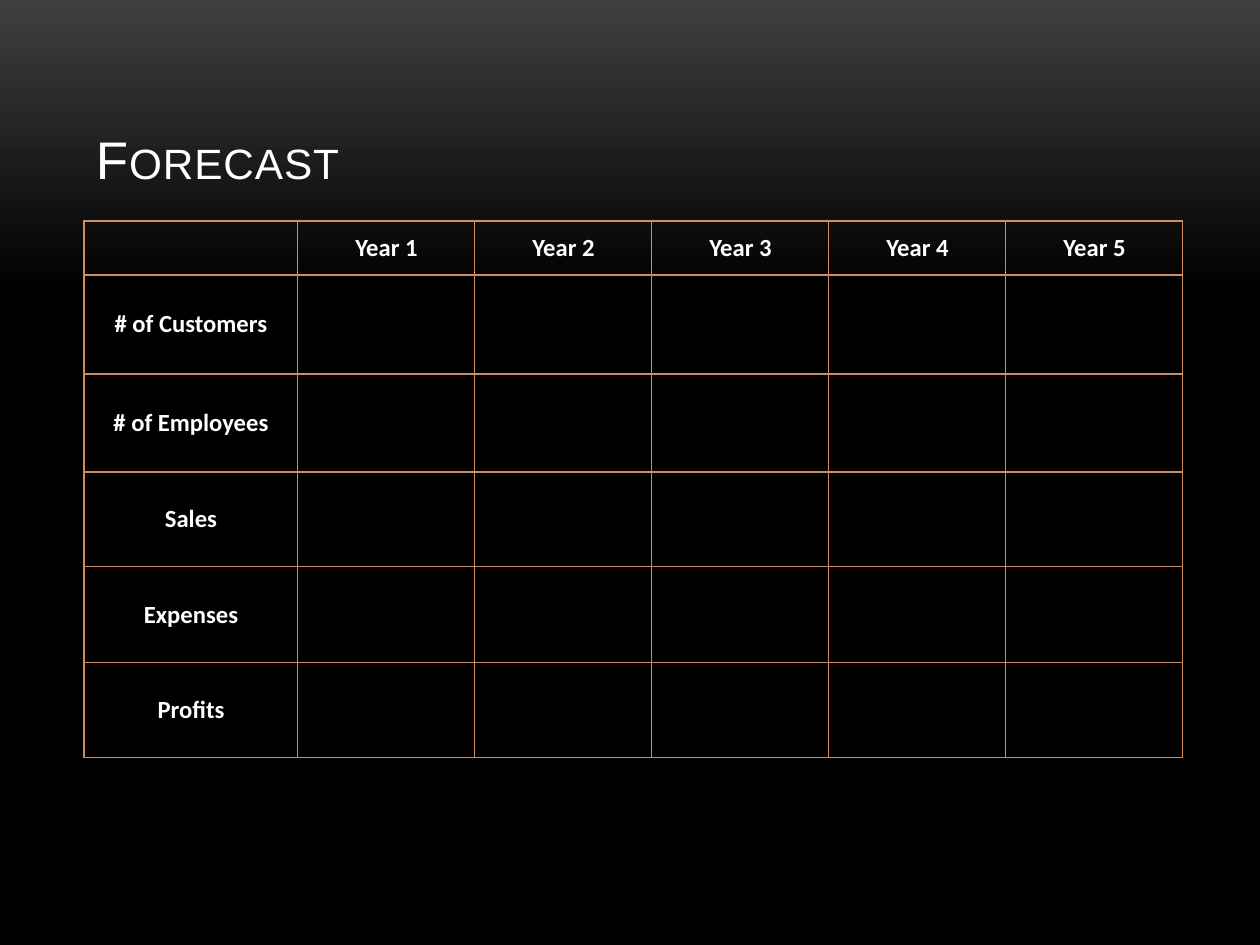
from copy import deepcopy

from pptx import Presentation
from pptx.dml.color import RGBColor
from pptx.enum.text import MSO_ANCHOR, MSO_AUTO_SIZE, PP_ALIGN
from pptx.oxml import parse_xml
from pptx.oxml.ns import nsdecls, qn
from pptx.util import Pt

PX = 10320
MIDDLE, BOTTOM = MSO_ANCHOR.MIDDLE, MSO_ANCHOR.BOTTOM
LEFT, CENTER = PP_ALIGN.LEFT, PP_ALIGN.CENTER
NO_AUTOFIT = MSO_AUTO_SIZE.NONE
WHITE, BLACK, CHARCOAL, COPPER = "FFFFFF", "000000", "3F3F3F", "CC8E60"


def color(value):
    return RGBColor.from_string(value)


def style_text(paragraph, font_name, size, align):
    paragraph.alignment = align
    for run in paragraph.runs:
        run.font.name = font_name
        run.font.size = Pt(size)
        run.font.color.rgb = color(WHITE)


prs = Presentation()
prs.slide_width, prs.slide_height = 1260 * PX, 945 * PX
slide = prs.slides.add_slide(prs.slide_layouts[5])

backdrop = slide.background.fill
backdrop.gradient()
backdrop.gradient_angle = 270
for stop, position, shade in zip(backdrop.gradient_stops, (0, 0.31), (CHARCOAL, BLACK)):
    stop.position = position
    stop.color.rgb = color(shade)
stop_list = next(slide._element.iter(qn("a:gsLst")))
last_stop = deepcopy(stop_list[-1])
last_stop.set("pos", "100000")
stop_list.append(last_stop)

heading = slide.shapes.title
heading.left, heading.top, heading.width, heading.height = (
    84 * PX, 38 * PX, 1092 * PX, 158 * PX)
heading_frame = heading.text_frame
heading_frame.text = "Forecast"
heading_frame.word_wrap = True
heading_frame.auto_size = NO_AUTOFIT
heading_frame.vertical_anchor = BOTTOM
heading_frame.margin_left = heading_frame.margin_right = 12 * PX
heading_frame.margin_top = heading_frame.margin_bottom = 6 * PX
style_text(heading_frame.paragraphs[0], "Arial", 43, LEFT)
heading_properties = heading_frame.paragraphs[0].runs[0].font._element
heading_properties.set("cap", "small")
heading_properties.set("spc", "70")

years = [f"Year {number}" for number in range(1, 6)]
measures = ["# of Customers", "# of Employees", "Sales", "Expenses", "Profits"]
column_widths = [214] + [177] * len(years)
row_heights = [54, 99, 98, 95, 96, 95]

forecast = slide.shapes.add_table(
    len(row_heights), len(column_widths), 84 * PX, 221 * PX,
    sum(column_widths) * PX, sum(row_heights) * PX).table
forecast.horz_banding = False
for column, width in zip(forecast.columns, column_widths):
    column.width = width * PX
for row, height in zip(forecast.rows, row_heights):
    row.height = height * PX
for index, year in enumerate(years, 1):
    forecast.cell(0, index).text = year
for index, measure in enumerate(measures, 1):
    forecast.cell(index, 0).text = measure

for cell in forecast.iter_cells():
    cell.vertical_anchor = MIDDLE
    cell.margin_left = cell.margin_right = 5 * PX
    cell.margin_top = cell.margin_bottom = 5 * PX
    cell_properties = cell._tc.get_or_add_tcPr()
    for side in ("lnL", "lnR", "lnT", "lnB"):
        cell_properties.append(parse_xml(
            f'<a:{side} {nsdecls("a")} w="12700"><a:solidFill>'
            f'<a:srgbClr val="{COPPER}"/></a:solidFill></a:{side}>'))
    cell.fill.background()
    label = cell.text_frame.paragraphs[0]
    style_text(label, "Calibri", 20, CENTER)
    for run in label.runs:
        run.font.bold = True

prs.save("out.pptx")
